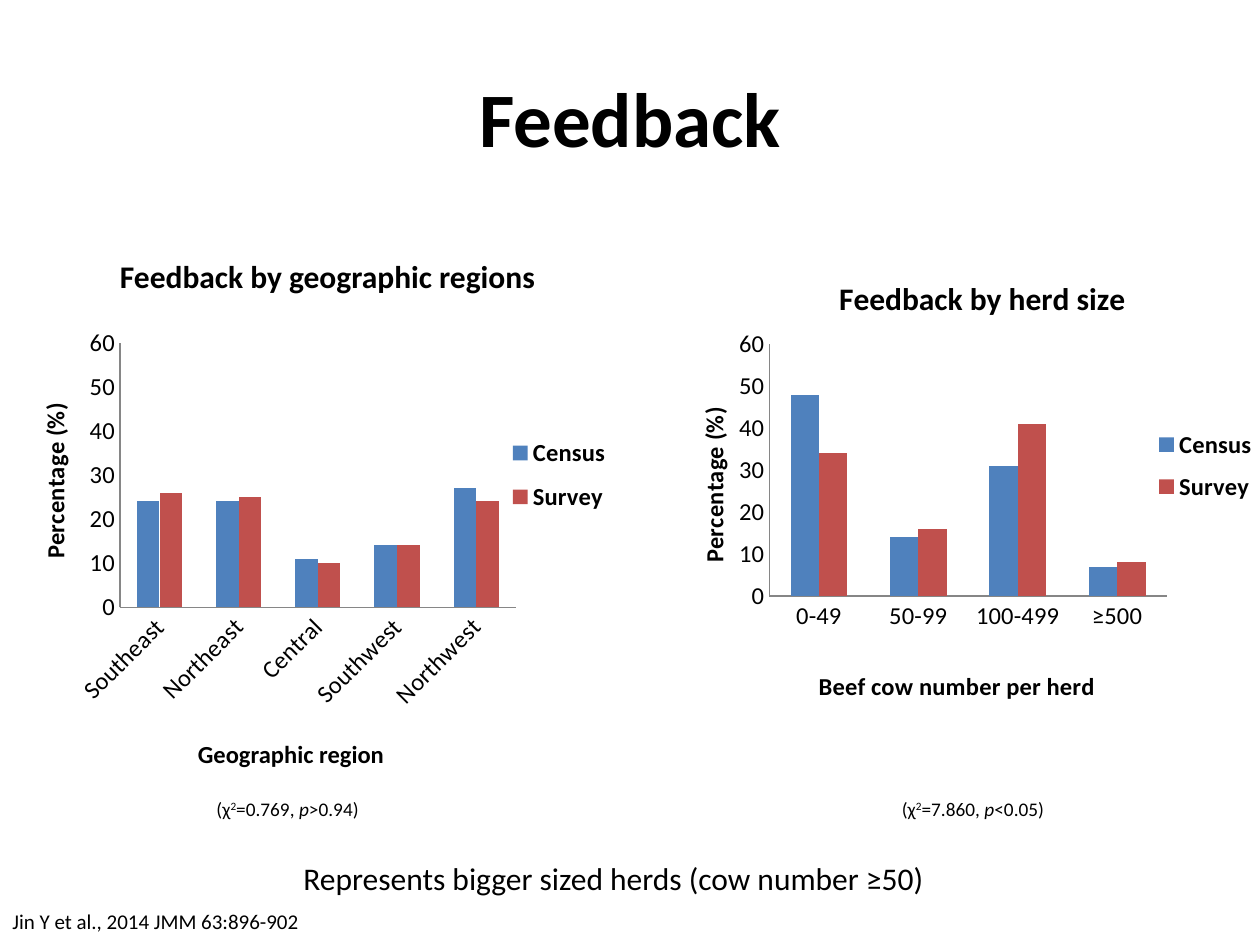
from dataclasses import dataclass
from typing import Optional

from lxml.etree import SubElement
from pptx import Presentation
from pptx.chart.data import CategoryChartData
from pptx.dml.color import RGBColor
from pptx.enum.chart import XL_CHART_TYPE as ChartType
from pptx.enum.chart import XL_LEGEND_POSITION as LegendPosition
from pptx.enum.chart import XL_TICK_MARK as TickMark
from pptx.enum.text import MSO_ANCHOR as Anchor
from pptx.enum.text import PP_ALIGN as Align
from pptx.oxml.ns import qn
from pptx.util import Inches, Pt


@dataclass(frozen=True)
class Theme:
    font: str = "Calibri"
    ink: RGBColor = RGBColor(0, 0, 0)
    axis: RGBColor = RGBColor(0x86, 0x86, 0x86)
    census: RGBColor = RGBColor(0x4F, 0x81, 0xBD)
    survey: RGBColor = RGBColor(0xC0, 0x50, 0x4D)
    title: int = 44
    heading: int = 18
    chart: int = 14
    source: int = 12
    statistic: int = 11


THEME = Theme()


@dataclass(frozen=True)
class FeedbackChart:
    box: tuple[float, ...]
    categories: tuple[str, ...]
    census: tuple[int, ...]
    survey: tuple[int, ...]
    # Positions inside the chart, as fractions of its size
    layouts: dict[str, tuple[float, ...]]
    title: Optional[str] = None
    category_title: Optional[str] = None
    label_angle: int = 0


@dataclass(frozen=True)
class Caption:
    box: tuple[float, ...]
    text: str
    size: int
    bold: bool = False
    align: Align = Align.LEFT
    wrap: bool = False


@dataclass(frozen=True)
class ChiSquare:
    box: tuple[float, ...]
    value: str
    p_value: str


CHARTS = (
    FeedbackChart(
        (5.24, 1.97, 5.09, 3.66),
        ("0-49", "50-99", "100-499", "≥500"),
        (48, 14, 31, 7), (34, 16, 41, 8),
        {"c:plotArea": (0.17, 0.21, 0.62, 0.55),
         "c:legend": (0.76, 0.37, 0.18, 0.21),
         "c:title": (0.27, 0.05),
         "c:plotArea/c:catAx/c:title": (0.24, 0.91),
         "c:plotArea/c:valAx/c:title": (0.05, 0.34)},
        "Feedback by herd size", "Beef cow number per herd"),
    FeedbackChart(
        (-0.03, 1.75, 4.91, 4.04),
        ("Southeast", "Northeast", "Central", "Southwest", "Northwest"),
        (24, 24, 11, 14, 27), (26, 25, 10, 14, 24),
        {"c:plotArea": (0.2, 0.24, 0.64, 0.52),
         "c:legend": (0.82, 0.4, 0.18, 0.2),
         "c:plotArea/c:valAx/c:title": (0.06, 0.35)},
        label_angle=-45),
)

CAPTIONS = (
    Caption((0.84, 1.99, 3.52, 0.4), "Feedback by geographic regions",
            THEME.heading, True, Align.CENTER),
    Caption((1.46, 5.82, 1.7, 0.34), "Geographic region",
            THEME.chart, True, Align.CENTER),
    Caption((2.31, 6.77, 5.14, 0.4),
            "Represents bigger sized herds (cow number ≥50)",
            THEME.heading, wrap=True),
    Caption((0, 7.16, 2.51, 0.3), "Jin Y et al., 2014 JMM 63:896-902",
            THEME.source),
)

STATISTICS = (
    ChiSquare((1.62, 6.28, 1.37, 0.29), "0.769", ">0.94"),
    ChiSquare((7.06, 6.28, 1.37, 0.29), "7.860", "<0.05"),
)


def style(font, size: int, bold: bool = False) -> None:
    font.name, font.size, font.bold = THEME.font, Pt(size), bold
    font.color.rgb = THEME.ink


def set_title(owner, text: str, size: int) -> None:
    """Give a chart or an axis a bold title."""
    owner.has_title = True
    heading = owner.chart_title if hasattr(owner, "chart_title") else owner.axis_title
    heading.text_frame.text = text
    style(heading.text_frame.paragraphs[0].runs[0].font, size, True)


def set_layout(part, fractions: tuple[float, ...]) -> None:
    """Place a chart part by hand; plot areas are measured without labels."""
    layout = part.find(qn("c:layout"))
    if layout is None:
        layout = SubElement(part, qn("c:layout"))
        before = part.find(qn("c:tx"))
        if before is None:
            before = part.find(qn("c:legendPos"))
        part.insert(0 if before is None else part.index(before) + 1, layout)
    manual = SubElement(layout, qn("c:manualLayout"))
    settings = [("xMode", "edge"), ("yMode", "edge"), *zip("xywh", fractions)]
    if part.tag == qn("c:plotArea"):
        settings.insert(0, ("layoutTarget", "inner"))
    for name, value in settings:
        SubElement(manual, qn(f"c:{name}")).set("val", str(value))


def add_feedback_chart(slide, spec_: FeedbackChart) -> None:
    data = CategoryChartData()
    data.categories = spec_.categories
    data.add_series("Census", spec_.census)
    data.add_series("Survey", spec_.survey)
    chart = slide.shapes.add_chart(
        ChartType.COLUMN_CLUSTERED, *map(Inches, spec_.box), data).chart
    style(chart.font, THEME.chart)

    # Columns
    columns = chart.plots[0]
    columns.gap_width, columns.overlap = 150, 0
    columns.vary_by_categories = False
    for series, color in zip(columns.series, (THEME.census, THEME.survey)):
        series.format.fill.solid()
        series.format.fill.fore_color.rgb = color

    # Axes
    categories, percentages = chart.category_axis, chart.value_axis
    for axis in (categories, percentages):
        axis.has_major_gridlines = False
        axis.major_tick_mark = axis.minor_tick_mark = TickMark.NONE
        axis.format.line.color.rgb = THEME.axis
        axis.format.line.width = Pt(0.75)
        style(axis.tick_labels.font, THEME.chart)
    percentages.minimum_scale, percentages.maximum_scale = 0, 60
    percentages.major_unit = 10
    set_title(percentages, "Percentage (%)", THEME.chart)
    if spec_.category_title:
        set_title(categories, spec_.category_title, THEME.chart)
    if spec_.label_angle:
        label_body = chart.element.xpath(".//c:catAx/c:txPr/a:bodyPr")[0]
        label_body.set("rot", str(spec_.label_angle * 60000))

    # Title and legend
    chart.has_title = False
    if spec_.title:
        set_title(chart, spec_.title, THEME.heading)
    chart.has_legend = True
    chart.legend.position = LegendPosition.RIGHT
    chart.legend.include_in_layout = False
    style(chart.legend.font, THEME.chart, True)

    for part, fractions in spec_.layouts.items():
        set_layout(chart.element.xpath(f"c:chart/{part}")[0], fractions)


def add_caption(slide, caption: Caption) -> None:
    frame = slide.shapes.add_textbox(*map(Inches, caption.box)).text_frame
    frame.word_wrap = caption.wrap
    frame.text = caption.text
    paragraph = frame.paragraphs[0]
    paragraph.alignment = caption.align
    style(paragraph.runs[0].font, caption.size, caption.bold)


def add_statistic(slide, statistic: ChiSquare) -> None:
    frame = slide.shapes.add_textbox(*map(Inches, statistic.box)).text_frame
    frame.word_wrap = False
    pieces = ("(χ", "2", f"={statistic.value}, ", "p", f"{statistic.p_value})")
    for piece in pieces:
        run = frame.paragraphs[0].add_run()
        run.text = piece
        style(run.font, THEME.statistic)
        if piece == "p":
            run.font.italic = True
        elif piece == "2":
            run.font._element.set("baseline", "30000")


def main() -> None:
    deck = Presentation()
    deck.slide_width, deck.slide_height = Inches(10), Inches(7.5)
    slide = deck.slides.add_slide(deck.slide_layouts[5])

    # Slide title
    title = slide.shapes.title
    title.left, title.top, title.width, title.height = map(Inches, (0.5, 0.3, 9, 1.25))
    title.text_frame.text = "Feedback"
    title.text_frame.vertical_anchor = Anchor.MIDDLE
    heading = title.text_frame.paragraphs[0]
    heading.alignment = Align.CENTER
    style(heading.runs[0].font, THEME.title, True)

    # Charts, then the text around them
    for chart in CHARTS:
        add_feedback_chart(slide, chart)
    for caption in CAPTIONS:
        add_caption(slide, caption)
    for statistic in STATISTICS:
        add_statistic(slide, statistic)
    deck.save("out.pptx")


if __name__ == "__main__":
    main()
